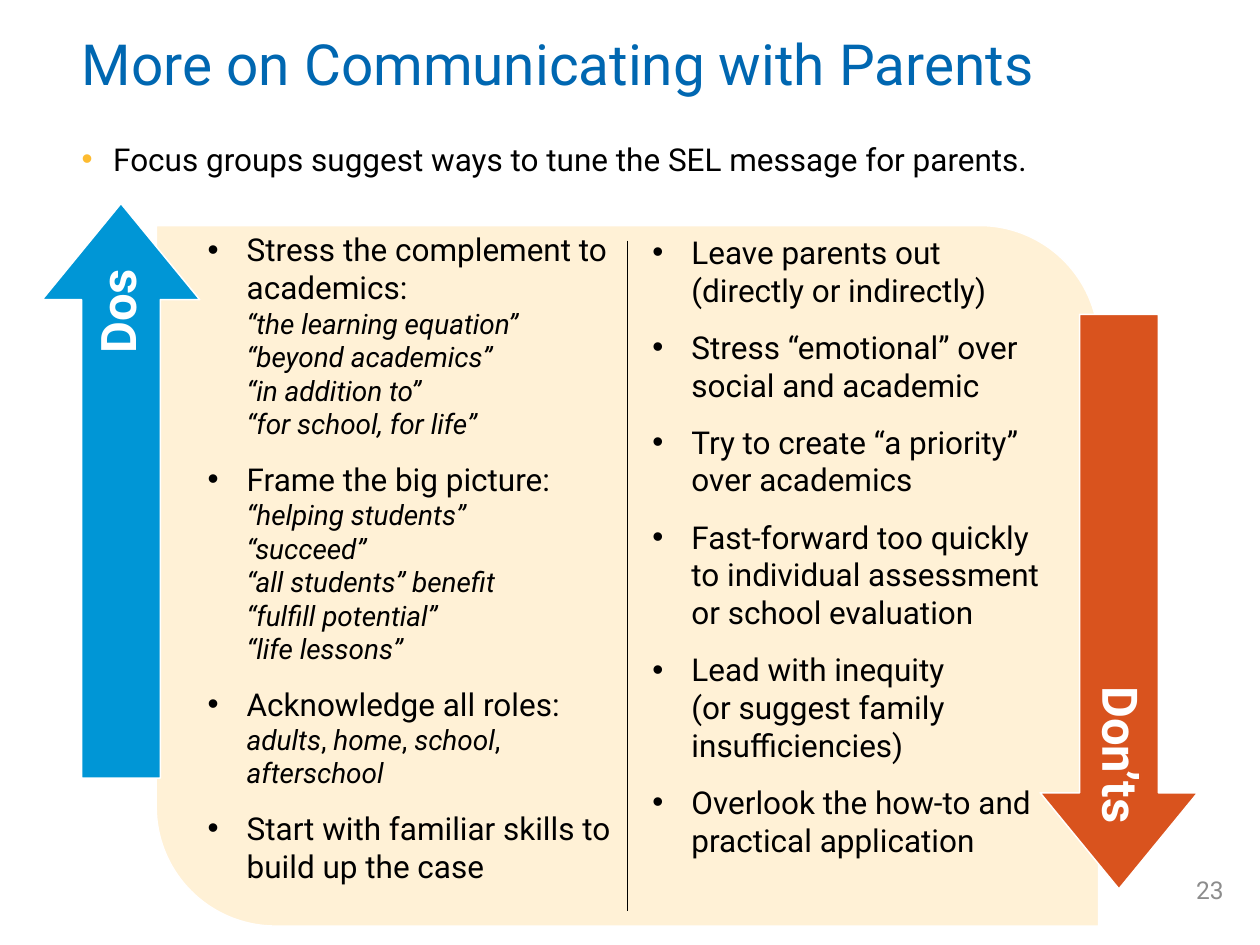
from dataclasses import dataclass

from lxml.etree import SubElement
from pptx import Presentation
from pptx.dml.color import RGBColor
from pptx.enum.shapes import MSO_CONNECTOR, MSO_SHAPE as SHAPE
from pptx.enum.text import MSO_ANCHOR as ANCHOR, MSO_AUTO_SIZE, PP_ALIGN as ALIGN
from pptx.oxml.ns import qn
from pptx.util import Inches, Pt

FONT = "Roboto"
BLACK = RGBColor(0x00, 0x00, 0x00)
WHITE = RGBColor(0xFF, 0xFF, 0xFF)
GRAY = RGBColor(0x8C, 0x8C, 0x8C)
TITLE_BLUE = RGBColor(0x00, 0x67, 0xB1)
DO_BLUE = RGBColor(0x00, 0x96, 0xD6)
DONT_ORANGE = RGBColor(0xD9, 0x53, 0x1E)
CREAM = RGBColor(0xFF, 0xF1, 0xD6)
GOLD = RGBColor(0xFD, 0xBB, 0x30)

COLUMNS, ROWS = 100, 75
WIDTH, HEIGHT = Inches(10), Inches(7.5)

DOS = [
    "Stress the complement to academics:\n*“the learning equation”*\n*“beyond academics”*\n"
    "*“in addition to”*\n*“for school, for life”*",
    "Frame the big picture:\n*“helping students”*\n*“succeed”*\n"
    "*“all students” benefit*\n*“fulfill potential”*\n*“life lessons”*",
    "Acknowledge all roles:\n*adults*, *home*, *school*, *afterschool*",
    "Start with familiar skills to build up the case",
]
DONTS = [
    "Leave parents out\n(directly or indirectly)",
    "Stress “emotional” over social and academic",
    "Try to create “a priority” over academics",
    "Fast-forward too quickly\nto individual assessment or school evaluation",
    "Lead with inequity\n(or suggest family insufficiencies)",
    "Overlook the how-to and practical application",
]


@dataclass
class Box:
    column: float
    row: float
    columns: float
    rows: float

    def inner(self, column, row, columns, rows):
        return Box(self.column + column, self.row + row, columns, rows)

    def turned(self):
        return Box(self.column + (self.columns - self.rows) / 2,
                   self.row + (self.rows - self.columns) / 2, self.rows, self.columns)

    def frame(self):
        return (across(self.column), down(self.row),
                across(self.columns), down(self.rows))


def across(columns):
    return round(WIDTH * columns / COLUMNS)


def down(rows):
    return round(HEIGHT * rows / ROWS)


def style(run, size, color, bold=False, italic=False):
    run.font.name = FONT
    run.font.size = Pt(size)
    run.font.bold = bold
    run.font.italic = italic
    run.font.color.rgb = color


def add_text(slide, box, anchor=ANCHOR.TOP):
    holder = slide.shapes.add_textbox(*box.frame())
    holder.text_frame.word_wrap = True
    holder.text_frame.vertical_anchor = anchor
    return holder


def add_bullet(paragraph, indent, color):
    properties = paragraph._p.get_or_add_pPr()
    properties.set("marL", str(Inches(indent)))
    properties.set("indent", str(-Inches(indent)))
    tint = SubElement(properties, qn("a:buClr"))
    SubElement(tint, qn("a:srgbClr"), val=str(color))
    SubElement(properties, qn("a:buFont"), typeface="Arial")
    SubElement(properties, qn("a:buChar"), char="•")


def add_shape(slide, kind, box, fill, adjustments):
    shape = slide.shapes.add_shape(kind, *box.frame())
    shape.shadow.inherit = False
    shape.fill.solid()
    shape.fill.fore_color.rgb = fill
    shape.line.color.rgb = WHITE
    shape.line.width = Pt(0.85)
    for index, value in enumerate(adjustments):
        shape.adjustments[index] = value
    return shape


def place_title(slide, box):
    title = slide.shapes.title
    title.left, title.top, title.width, title.height = box.frame()
    frame = title.text_frame
    frame.text = "More on Communicating with Parents"
    frame.auto_size = MSO_AUTO_SIZE.NONE
    frame.vertical_anchor = ANCHOR.MIDDLE
    heading = frame.paragraphs[0]
    heading.alignment = ALIGN.LEFT
    heading.line_spacing = 0.9
    style(heading.runs[0], 32.4, TITLE_BLUE)


def place_number(slide, box):
    number = add_text(slide, box, ANCHOR.MIDDLE).text_frame.paragraphs[0]
    number.text = "23"
    number.alignment = ALIGN.RIGHT
    style(number.runs[0], 14, GRAY)


def place_intro(slide, box):
    intro = add_text(slide, box).text_frame.paragraphs[0]
    intro.text = "Focus groups suggest ways to tune the SEL message for parents."
    add_bullet(intro, 0.25, GOLD)
    style(intro.runs[0], 18, BLACK)


def place_advice(slide, box, items, detail_size):
    frame = add_text(slide, box).text_frame
    for index, item in enumerate(items):
        advice = frame.paragraphs[0] if index == 0 else frame.add_paragraph()
        if index:
            advice.space_before = Pt(11)
        add_bullet(advice, 0.31, BLACK)
        for line_index, line in enumerate(item.split("\n")):
            if line_index:
                advice.add_line_break()
            size = detail_size if line_index else 18
            for part_index, part in enumerate(line.split("*")):
                if part:
                    run = advice.add_run()
                    run.text = part
                    style(run, size, BLACK, italic=part_index % 2 == 1)
        for line_break in advice._p.findall(qn("a:br")):
            SubElement(line_break, qn("a:rPr"), sz=str(detail_size * 100))


def place_divider(slide, box):
    x = across(box.column)
    divider = slide.shapes.add_connector(
        MSO_CONNECTOR.STRAIGHT, x, down(box.row), x, down(box.row + box.rows))
    divider.line.color.rgb = BLACK
    divider.line.width = Pt(0.85)
    SubElement(divider._element.spPr, qn("a:effectLst"))


def place_arrow(slide, box, label, color, points_up):
    rotation = 270 if points_up else 90
    arrow = add_shape(slide, SHAPE.RIGHT_ARROW, box.turned(), color, (0.5, 0.61))
    arrow.rotation = rotation
    tail_shift = 2 if points_up else -2
    label_box = box.inner(3.1, 2 + tail_shift, 6.2, 41.6)
    caption = add_text(slide, label_box.turned(), ANCHOR.MIDDLE)
    caption.rotation = rotation
    frame = caption.text_frame
    frame.margin_left = frame.margin_right = Inches(0.12)
    frame.margin_top = frame.margin_bottom = Inches(0.12)
    word = frame.paragraphs[0]
    word.text = label
    word.alignment = ALIGN.RIGHT
    word.line_spacing = 0.9
    style(word.runs[0], 28, WHITE, bold=True)


def place_board(slide, box):
    add_shape(slide, SHAPE.ROUND_2_DIAG_RECTANGLE, box, CREAM, (0, 0.17))
    place_divider(slide, box.inner(37.4, 1.2, 0, 53.2))
    place_arrow(slide, box.inner(-9.05, -1.75, 12.5, 45.6), "Dos", DO_BLUE, True)
    place_arrow(slide, box.inner(70.15, 7.05, 12.5, 45.6), "Don’ts", DONT_ORANGE, False)
    place_advice(slide, box.inner(38.4, 0.1, 35, 53.1), DONTS, 18)
    place_advice(slide, box.inner(3.1, -0.1, 35, 55.8), DOS, 16)


def main():
    deck = Presentation()
    deck.slide_width, deck.slide_height = WIDTH, HEIGHT
    slide = deck.slides.add_slide(deck.slide_layouts[5])
    place_title(slide, Box(5.5, 0, 78.4, 10.6))
    place_number(slide, Box(90.7, 68.6, 7.4, 4))
    place_intro(slide, Box(5.5, 10.6, 86.2, 9.4))
    place_board(slide, Box(12.4, 17.9, 74.8, 55.6))
    deck.save("out.pptx")


if __name__ == "__main__":
    main()
